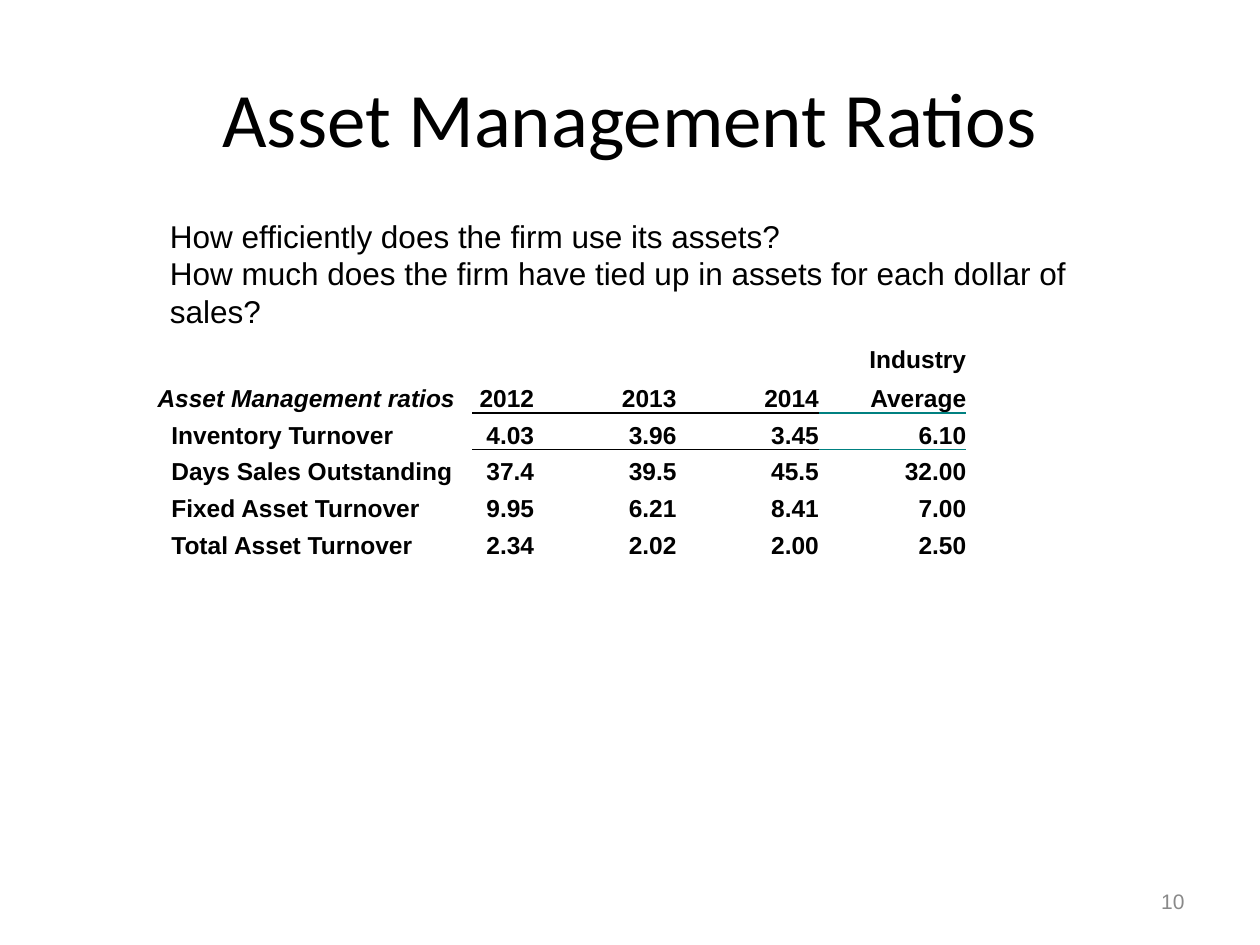
from lxml import etree
from pptx import Presentation
from pptx.dml.color import RGBColor
from pptx.enum.text import MSO_ANCHOR as Anchor, PP_ALIGN as Align
from pptx.oxml.ns import qn
from pptx.util import Inches, Pt

BLACK = RGBColor(0x00, 0x00, 0x00)
GREY = RGBColor(0x89, 0x89, 0x89)
TEAL = RGBColor(0x00, 0x80, 0x80)

NO_GRID = "{2D5ABB26-0587-4C30-8999-92F81FD0307C}"
COLS = [0.96, 1.54, 0.49, 1.13, 1.13, 1.17]
ROWS = [0.29, 0.31, 0.29, 0.29, 0.29, 0.29]
RATIOS = [
    ["", "", "", "", "Industry"],
    ["Asset Management ratios", "2012", "2013", "2014", "Average"],
    ["Inventory Turnover", "4.03", "3.96", "3.45", "6.10"],
    ["Days Sales Outstanding", "37.4", "39.5", "45.5", "32.00"],
    ["Fixed Asset Turnover", "9.95", "6.21", "8.41", "7.00"],
    ["Total Asset Turnover", "2.34", "2.02", "2.00", "2.50"],
]
HEAD = 1  # row of the column headings


def style(frame, size, color=BLACK, face="Arial", align=Align.LEFT,
          bold=False, italic=False):
    for para in frame.paragraphs:
        para.alignment = align
        for run in para.runs:
            font = run.font
            font.size, font.name = Pt(size), face
            font.bold, font.italic = bold, italic
            font.color.rgb = color


def add_text(slide, box, text, size, anchor=Anchor.MIDDLE, **look):
    frame = slide.shapes.add_textbox(*map(Inches, box)).text_frame
    frame.word_wrap = True
    frame.vertical_anchor = anchor
    frame.text = text
    style(frame, size, **look)


def add_rule(cell, side, color):
    """Draw a 1 pt border on one side of a cell."""
    line = etree.Element(qn("a:" + side), w=str(Pt(1)))
    fill = etree.SubElement(line, qn("a:solidFill"))
    etree.SubElement(fill, qn("a:srgbClr"), val=str(color))
    cell._tc.get_or_add_tcPr().insert(0, line)


def set_cell(cell, text="", indent=0, **look):
    cell.margin_left = Inches(indent)
    cell.margin_right = cell.margin_top = cell.margin_bottom = 0
    cell.vertical_anchor = Anchor.BOTTOM
    cell.fill.background()
    cell.text_frame.text = text
    style(cell.text_frame, 14, bold=True, **look)
    if not text:  # keeps empty cells from stretching the row
        end = cell.text_frame.paragraphs[0]._p.get_or_add_endParaRPr()
        end.set("sz", "1400")


def add_table(slide, left, top):
    shape = slide.shapes.add_table(
        len(ROWS), len(COLS), Inches(left), Inches(top),
        Inches(sum(COLS)), Inches(sum(ROWS)))
    table = shape.table
    table.first_row = table.horz_banding = False
    table._tbl.tblPr.find(qn("a:tableStyleId")).text = NO_GRID
    for col, width in zip(table.columns, COLS):
        col.width = Inches(width)
    for row, height in zip(table.rows, ROWS):
        row.height = Inches(height)

    for r, (label, *values) in enumerate(RATIOS):
        # Labels span the first two columns
        set_cell(table.cell(r, 1))
        set_cell(table.cell(r, 0), label, italic=r == HEAD,
                 indent=0.11 if r > HEAD else 0)
        if label:
            table.cell(r, 0).merge(table.cell(r, 1))
        for c, value in enumerate(values, 2):
            set_cell(table.cell(r, c), value, align=Align.RIGHT)

    # Rule between headings and values
    for c in range(2, len(COLS)):
        color = TEAL if c == len(COLS) - 1 else BLACK
        add_rule(table.cell(HEAD, c), "lnB", color)
        add_rule(table.cell(HEAD + 1, c), "lnT", color)


def main():
    prs = Presentation()
    prs.slide_width, prs.slide_height = Inches(10), Inches(7.5)
    slide = prs.slides.add_slide(prs.slide_layouts[6])

    # Title
    add_text(slide, (0.5, 0.3, 9, 1.25), "Asset Management Ratios", 44,
             face="Calibri", align=Align.CENTER)
    # Ratios
    add_table(slide, 1.25, 2.68)
    # Slide number
    add_text(slide, (7.17, 6.95, 2.33, 0.4), "10", 12,
             color=GREY, align=Align.RIGHT)
    # Questions
    add_text(slide, (1.25, 1.67, 7.42, 1.01),
             "How efficiently does the firm use its assets?\n"
             "How much does the firm have tied up in assets "
             "for each dollar of sales?", 18, anchor=Anchor.TOP)

    prs.save("out.pptx")


if __name__ == "__main__":
    main()
